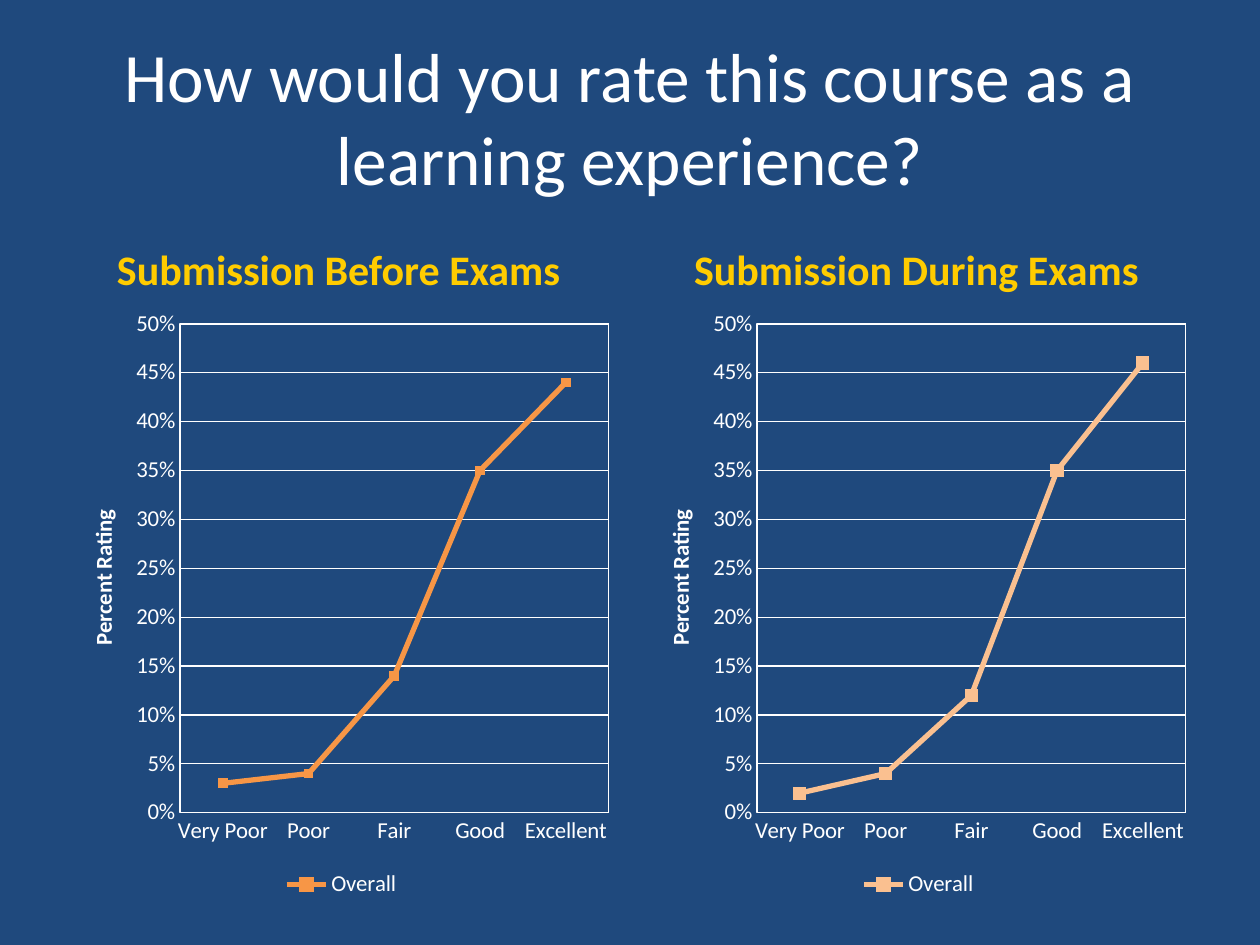
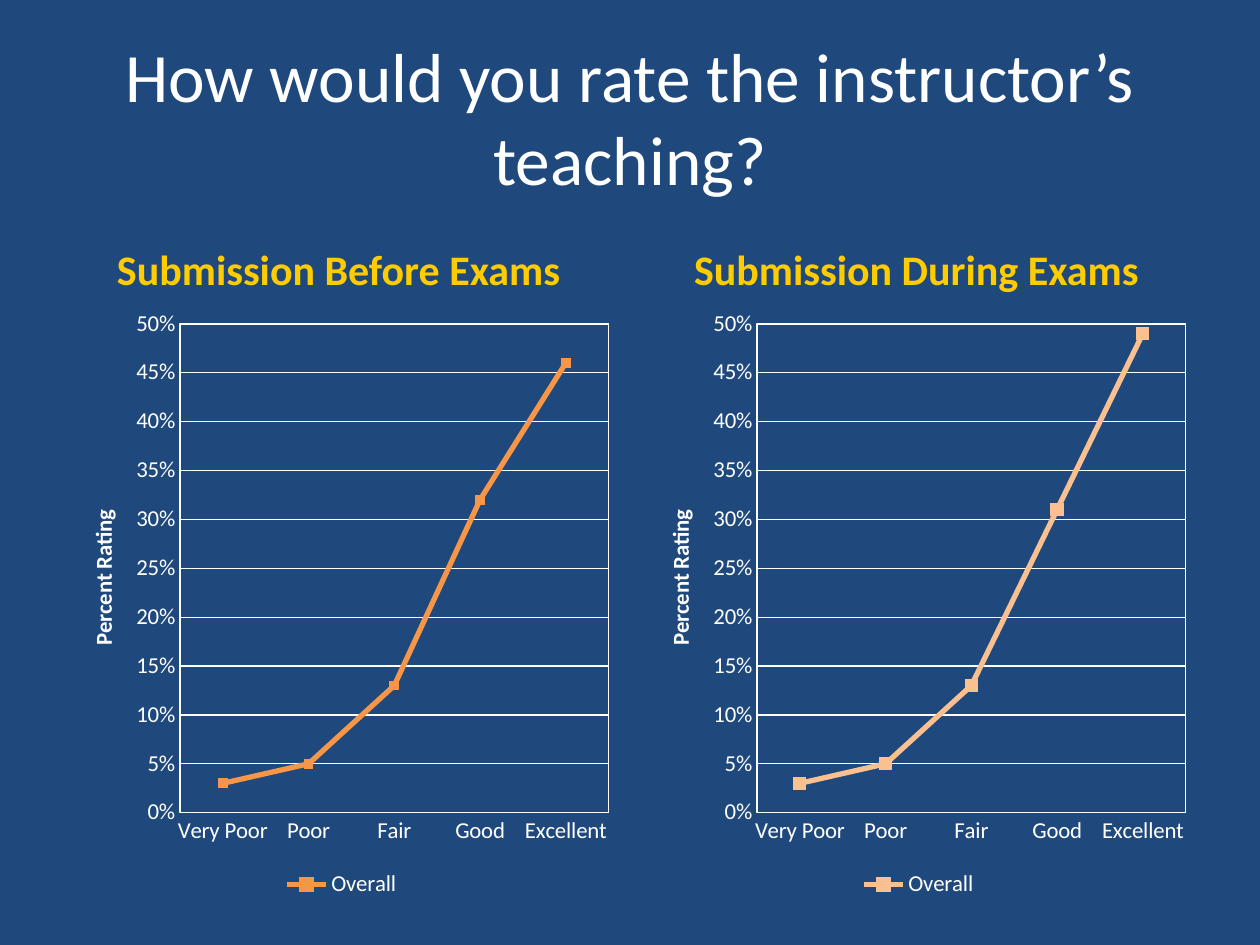
from pptx import Presentation, util as u
from pptx.chart.data import CategoryChartData
from pptx.dml.color import RGBColor
from pptx.enum import chart as ce, text
from pptx.oxml import parse_xml
from pptx.oxml.ns import qn

# Content
RATINGS = ["Very Poor", "Poor", "Fair", "Good", "Excellent"]
SERIES_NAME = "Overall"
AXIS_TITLE = "Percent Rating"
SLIDES = [
    ("How would you rate this course as a learning experience?",
     [[0.03, 0.04, 0.14, 0.35, 0.44], [0.02, 0.04, 0.12, 0.35, 0.46]]),
    ("How would you rate the instructor’s teaching?",
     [[0.03, 0.05, 0.13, 0.32, 0.46], [0.03, 0.05, 0.13, 0.31, 0.49]]),
]
# Heading, line colour, marker size of each column
COLUMNS = [("Submission Before Exams", "before", 5),
           ("Submission During Exams", "during", 7)]

# Shared style
COLOURS = {"back": "1F497D", "text": "FFFFFF", "heading": "FFCC00",
           "before": "F79646", "during": "FAC090"}
FONT = "Calibri"
LABEL_SIZE = 13

# Grid, in inches
WIDTH, HEIGHT = 10, 7.5
MARGIN, COLUMN_WIDTH = 0.5, 4.42
COLUMN_STEP = WIDTH - 2 * MARGIN - COLUMN_WIDTH
TITLE_TOP, TITLE_HEIGHT = 0.3, 1.25
HEADING_TOP, HEADING_HEIGHT, HEADING_INDENT = 1.68, 0.7, 0.33
CHART_TOP, CHART_HEIGHT = HEADING_TOP + HEADING_HEIGHT, 4.79
PLOT = {"x": 0.21, "y": 0.04, "w": 0.77, "h": 0.81}  # shares of the chart

CHART_NS = 'xmlns:c="http://schemas.openxmlformats.org/drawingml/2006/chart"'
DRAW_NS = 'xmlns:a="http://schemas.openxmlformats.org/drawingml/2006/main"'


def colour(name):
    return RGBColor.from_string(COLOURS[name])


def style_font(font, size, name="text", bold=False):
    font.name, font.size, font.bold = FONT, u.Pt(size), bold
    font.color.rgb = colour(name)


def style_line(line, name="text", width=0.75):
    line.color.rgb = colour(name)
    line.width = u.Pt(width)


def add_text(page, words, area, size, name, anchor, align, bold=False):
    box = page.shapes.add_textbox(*map(u.Inches, area))
    frame = box.text_frame
    frame.word_wrap = True
    frame.vertical_anchor = anchor
    para = frame.paragraphs[0]
    para.alignment = align
    span = para.add_run()
    span.text = words
    style_font(span.font, size, name, bold)


def frame_plot(chart):
    """Fix the inner plot rectangle and outline it."""
    plot_area = chart.element.find(f".//{qn('c:plotArea')}")
    for old in plot_area.findall(qn("c:layout")):
        plot_area.remove(old)
    modes = "".join(f'<c:{side}Mode val="edge"/>' for side in "xy")
    sizes = "".join(f'<c:{side} val="{share}"/>' for side, share in PLOT.items())
    plot_area.insert(0, parse_xml(
        f'<c:layout {CHART_NS}><c:manualLayout><c:layoutTarget val="inner"/>'
        f'{modes}{sizes}</c:manualLayout></c:layout>'))
    plot_area.append(parse_xml(
        f'<c:spPr {CHART_NS} {DRAW_NS}><a:noFill/><a:ln w="9525"><a:solidFill>'
        f'<a:srgbClr val="{COLOURS["text"]}"/></a:solidFill></a:ln></c:spPr>'))


def add_rating_chart(page, left, values, name, marker_size):
    data = CategoryChartData(number_format="0%")
    data.categories = RATINGS
    data.add_series(SERIES_NAME, values)
    area = (left, CHART_TOP, COLUMN_WIDTH, CHART_HEIGHT)
    chart = page.shapes.add_chart(ce.XL_CHART_TYPE.LINE_MARKERS,
                                  *map(u.Inches, area), data).chart
    style_font(chart.font, 10)
    chart.has_title = False
    chart.has_legend = True
    chart.legend.position = ce.XL_LEGEND_POSITION.BOTTOM
    chart.legend.include_in_layout = False
    style_font(chart.legend.font, LABEL_SIZE)

    # Axes
    ratings, percent = chart.category_axis, chart.value_axis
    for axis in (ratings, percent):
        axis.major_tick_mark = axis.minor_tick_mark = ce.XL_TICK_MARK.NONE
        style_font(axis.tick_labels.font, LABEL_SIZE)
    style_line(ratings.format.line)
    percent.format.line.fill.background()
    percent.minimum_scale, percent.maximum_scale = 0, 0.5
    percent.major_unit = 0.05
    percent.tick_labels.number_format = "0%"
    percent.tick_labels.number_format_is_linked = False
    percent.has_major_gridlines = True
    style_line(percent.major_gridlines.format.line)
    span = percent.axis_title.text_frame.paragraphs[0].add_run()
    span.text = AXIS_TITLE
    style_font(span.font, LABEL_SIZE, bold=True)

    # Line and markers
    chart.plots[0].vary_by_categories = False
    series = chart.plots[0].series[0]
    series.smooth = False
    style_line(series.format.line, name, 3)
    marker = series.marker
    marker.style, marker.size = ce.XL_MARKER_STYLE.SQUARE, marker_size
    marker.format.fill.solid()
    marker.format.fill.fore_color.rgb = colour(name)
    style_line(marker.format.line, name)
    frame_plot(chart)


def add_page(deck, title, charts):
    page = deck.slides.add_slide(deck.slide_layouts[6])
    page.background.fill.solid()
    page.background.fill.fore_color.rgb = colour("back")
    add_text(page, title, (MARGIN, TITLE_TOP, WIDTH - 2 * MARGIN, TITLE_HEIGHT),
             39.6, "text", text.MSO_ANCHOR.MIDDLE, text.PP_ALIGN.CENTER)
    for index, ((heading, name, marker_size), values) in enumerate(zip(COLUMNS, charts)):
        left = MARGIN + index * COLUMN_STEP
        add_text(page, heading,
                 (left + HEADING_INDENT, HEADING_TOP, COLUMN_WIDTH, HEADING_HEIGHT),
                 24, "heading", text.MSO_ANCHOR.BOTTOM, text.PP_ALIGN.LEFT, bold=True)
        add_rating_chart(page, left, values, name, marker_size)


def main():
    deck = Presentation()
    deck.slide_width, deck.slide_height = u.Inches(WIDTH), u.Inches(HEIGHT)
    for title, charts in SLIDES:
        add_page(deck, title, charts)
    deck.save("out.pptx")


if __name__ == "__main__":
    main()
